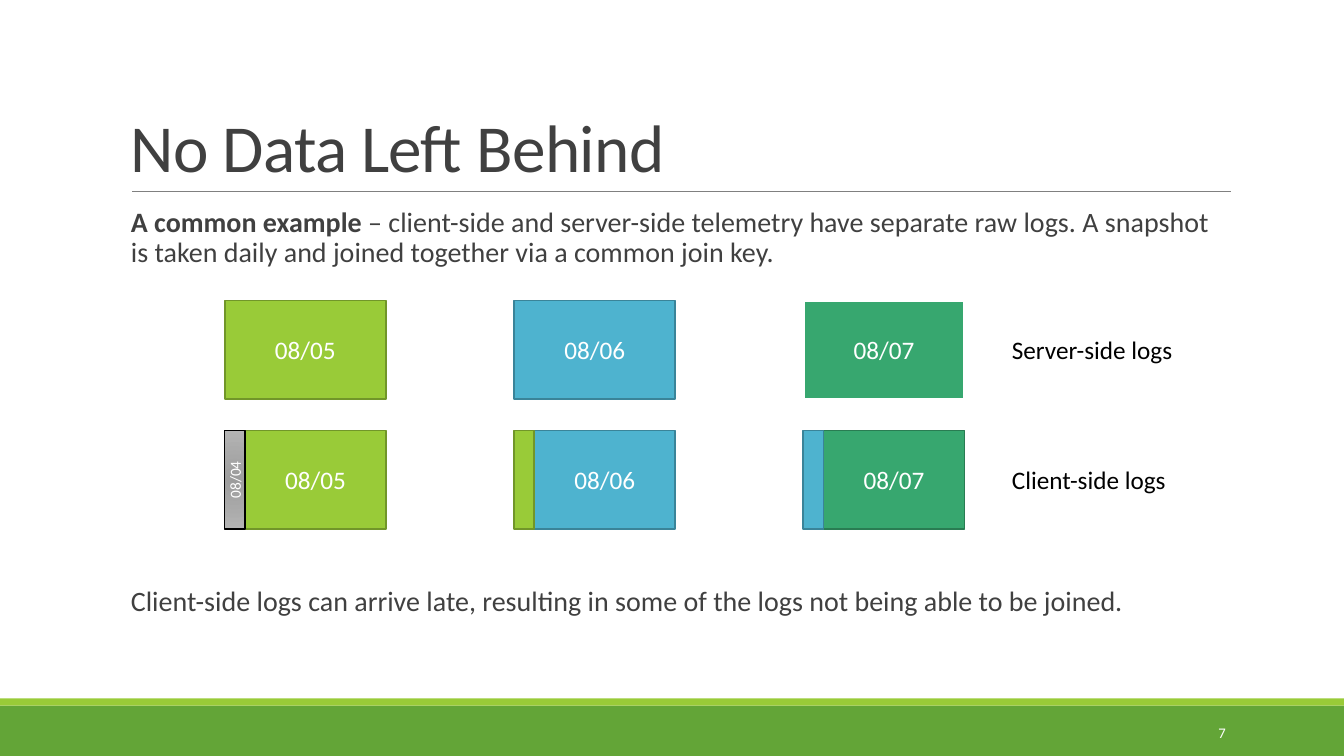
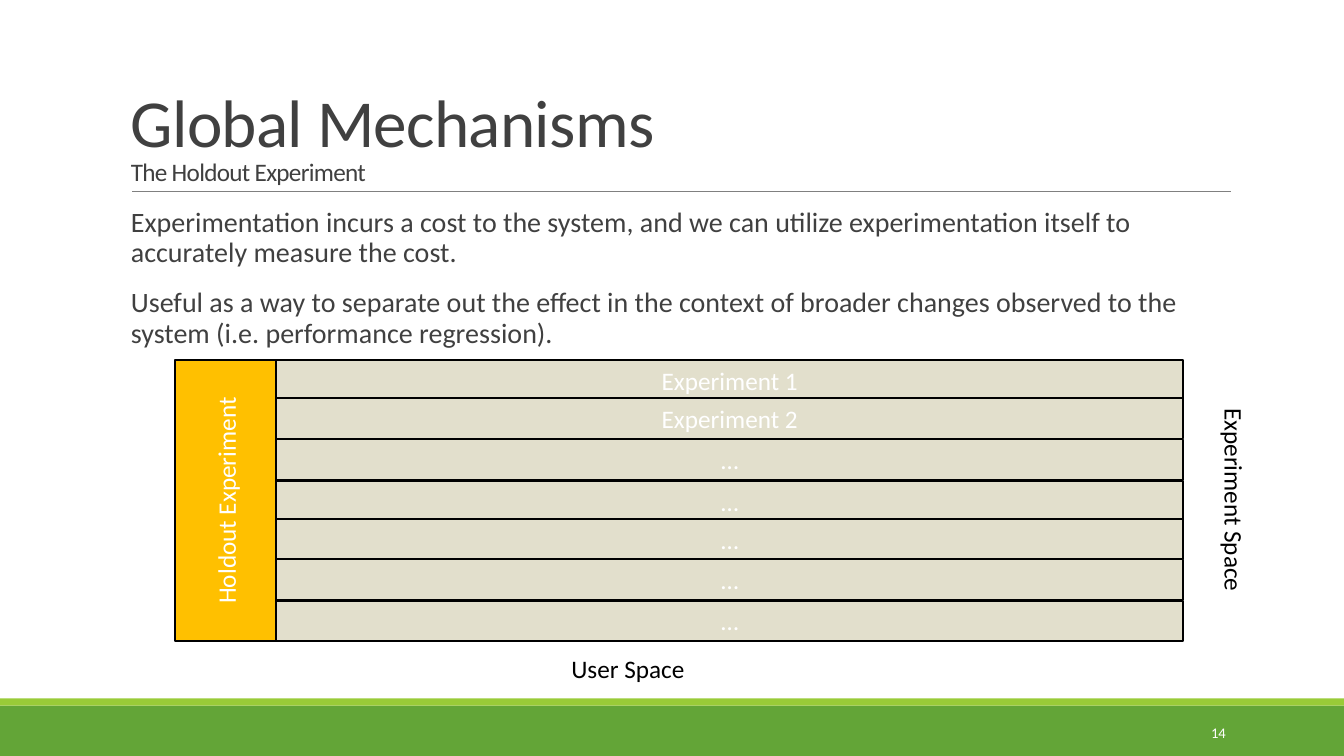
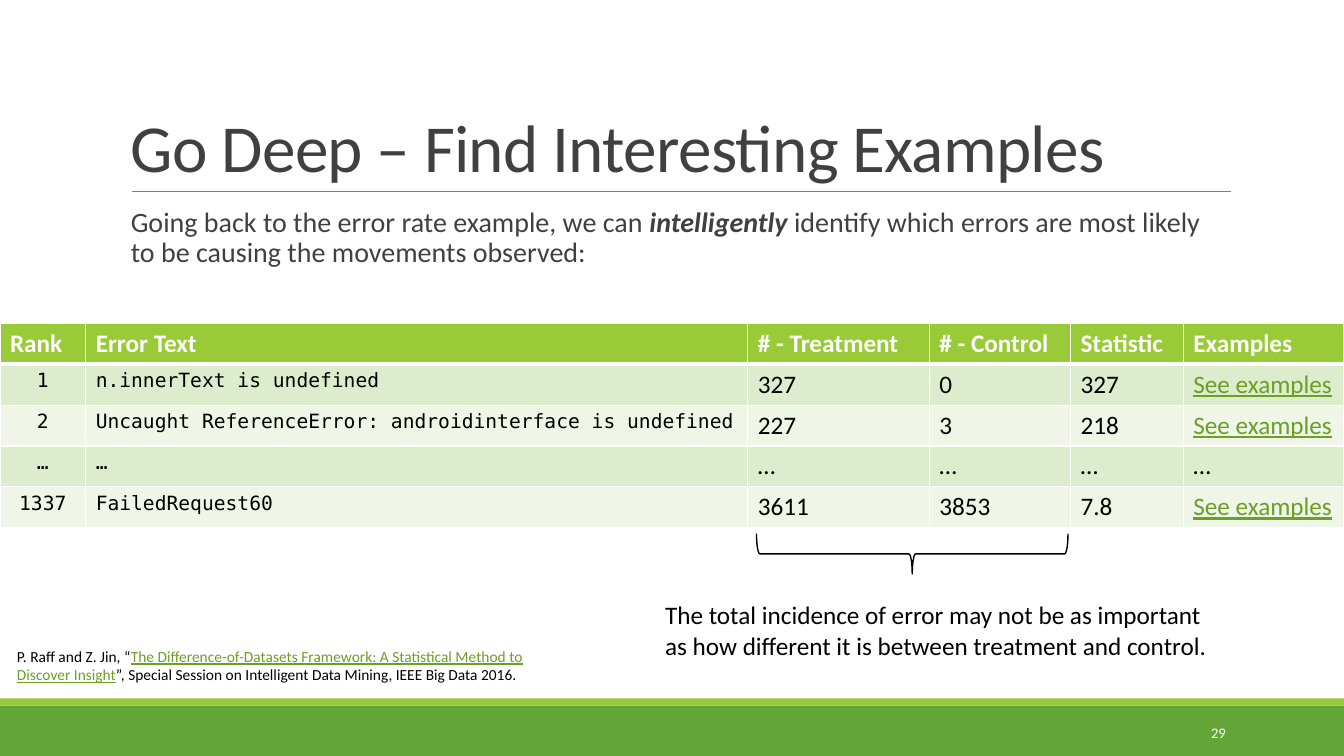
import pptx
import pptx.util
import pptx.dml.color
import pptx.enum.shapes
import pptx.enum.text
import pptx.oxml.ns
import lxml.etree

Inches, Pt = pptx.util.Inches, pptx.util.Pt
SHAPE = pptx.enum.shapes.MSO_SHAPE
ALIGN = pptx.enum.text.PP_ALIGN
ANCHOR = pptx.enum.text.MSO_ANCHOR
qn = pptx.oxml.ns.qn

# A 16:9 page
PAGE_H = 7.5
PAGE_W = PAGE_H * 16 / 9

COLORS = {
    "green": "63A537", "lime": "99CB38", "lime_edge": "719629",
    "blue": "4EB3CF", "blue_edge": "3A8499",
    "teal": "37A76F", "teal_edge": "297C52",
    "gold": "FFC000", "sand": "E2DFCC",
    "gray_dark": "9C9C9C", "gray_light": "B4B4B4", "rule": "808080",
    "text": "404040", "black": "000000", "white": "FFFFFF", "link": "6B9F25",
    "row_odd": "DEECCE", "row_even": "EFF6E8",
}
FONT, MONO = "Calibri", "DejaVu Sans Mono"
LINK = dict(color="link", underline=True)


def rgb(name):
    return pptx.dml.color.RGBColor.from_string(COLORS[name])


def add_run(p, text, size=18, color="black", font=FONT, bold=False,
            italic=False, underline=False, spacing=None):
    r = p.add_run()
    r.text = text
    f = r.font
    f.size, f.name, f.bold, f.italic = Pt(size), font, bold, italic
    f.color.rgb = rgb(color)
    if underline:
        f.underline = True
    if spacing is not None:
        r._r.get_or_add_rPr().set("spc", str(int(spacing * 100)))


def write(tf, paragraphs, align=ALIGN.LEFT, line=None, before=None, after=None, **fmt):
    """Fill a frame; a paragraph is a string or a list of (text, overrides)."""
    if isinstance(paragraphs, str):
        paragraphs = [paragraphs]
    for i, runs in enumerate(paragraphs):
        p = tf.paragraphs[0] if i == 0 else tf.add_paragraph()
        p.alignment = align
        if line:
            p.line_spacing = line
        if before is not None:
            p.space_before, p.space_after = Pt(before), Pt(after)
        for text, extra in [(runs, {})] if isinstance(runs, str) else runs:
            if text.startswith("\n"):
                p.add_line_break()
            add_run(p, text.lstrip("\n"), **{**fmt, **extra})


class Deck:
    def __init__(self):
        self.prs = pptx.Presentation()
        self.prs.slide_width, self.prs.slide_height = Inches(PAGE_W), Inches(PAGE_H)
        self.s = None

    def slide(self, title, number):
        """Start a slide with the shared bands, rule, title and number."""
        self.s = self.prs.slides.add_slide(self.prs.slide_layouts[6])
        self.box(0, 7, PAGE_W, 0.5, "green")
        self.box(0, 6.93, PAGE_W, 0.07, "lime")
        self.line(1.31, 1.9, 12.21, 1.9, "rule", 0.5)
        self.text(1.2, 0.31, 11, 1.59, [title], anchor=ANCHOR.BOTTOM,
                  line=0.85, size=48, color="text", spacing=-0.5)
        self.text(10.83, 7.07, 1.43, 0.4, str(number), anchor=ANCHOR.MIDDLE,
                  align=ALIGN.RIGHT, size=10.5, color="white")

    def line(self, x1, y1, x2, y2, color, width):
        c = self.s.shapes.add_connector(pptx.enum.shapes.MSO_CONNECTOR.STRAIGHT,
                                        Inches(x1), Inches(y1), Inches(x2), Inches(y2))
        c.line.color.rgb, c.line.width = rgb(color), Pt(width)
        lxml.etree.SubElement(c._element.spPr, qn("a:effectLst"))

    def box(self, x, y, w, h, fill=None, edge=None, width=1.25, text=None,
            vert=None, size=18, kind=SHAPE.RECTANGLE):
        sp = self.s.shapes.add_shape(kind, Inches(x), Inches(y), Inches(w), Inches(h))
        sp.shadow.inherit = False
        if fill:
            sp.fill.solid()
            sp.fill.fore_color.rgb = rgb(fill)
        else:
            sp.fill.background()
        if edge:
            sp.line.color.rgb, sp.line.width = rgb(edge), Pt(width)
        else:
            sp.line.fill.background()
        if text:
            tf = sp.text_frame
            tf.word_wrap, tf.vertical_anchor = True, ANCHOR.MIDDLE
            if vert:
                tf._txBody.bodyPr.set("vert", vert)
            write(tf, text, align=ALIGN.CENTER, size=size, color="white")
        return sp

    def radial(self, sp, inner, outer):
        """Give a shape a circular gradient centred on its lower right corner."""
        sp.fill.gradient()
        for stop, color in zip(sp.fill.gradient_stops, (inner, outer)):
            stop.color.rgb = rgb(color)
        grad = sp._element.spPr.find(qn("a:gradFill"))
        for old in grad.findall(qn("a:lin")):
            grad.remove(old)
        circle = lxml.etree.SubElement(grad, qn("a:path"), path="circle")
        lxml.etree.SubElement(circle, qn("a:fillToRect"),
                              l="100000", t="100000", r="100000", b="100000")

    def text(self, x, y, w, h, paragraphs, anchor=ANCHOR.TOP, wrap=True, vert=None, **fmt):
        tf = self.s.shapes.add_textbox(Inches(x), Inches(y), Inches(w), Inches(h)).text_frame
        tf.word_wrap, tf.vertical_anchor = wrap, anchor
        if vert:
            tf._txBody.bodyPr.set("vert", vert)
        write(tf, paragraphs, **fmt)

    def body(self, paragraphs, y=2.02, h=1.5):
        self.text(1.2, y, 11, h, paragraphs, line=0.9, before=12, after=2,
                  size=20, color="text")

    def cell(self, cell, text, fill, top=1, bottom=1, **fmt):
        tcPr = cell._tc.get_or_add_tcPr()
        for side, width in (("L", 1), ("R", 1), ("T", top), ("B", bottom)):
            ln = lxml.etree.SubElement(tcPr, qn("a:ln" + side), w=str(Pt(width)))
            solid = lxml.etree.SubElement(ln, qn("a:solidFill"))
            lxml.etree.SubElement(solid, qn("a:srgbClr"), val=COLORS["white"])
        cell.fill.solid()
        cell.fill.fore_color.rgb = rgb(fill)
        write(cell.text_frame, text, **fmt)

    def table(self, x, y, widths, row_h, rows):
        """Table with a green header, banded rows and two monospaced columns."""
        t = self.s.shapes.add_table(len(rows), len(widths), Inches(x), Inches(y),
                                    Inches(sum(widths)), Inches(row_h * len(rows))).table
        for col, w in zip(t.columns, widths):
            col.width = Inches(w)
        for i, row in enumerate(rows):
            t.rows[i].height = Inches(row_h)
            for j, text in enumerate(row):
                if i == 0:
                    self.cell(t.cell(i, j), text, "lime", bottom=3, color="white", bold=True)
                    continue
                fmt = dict(font=MONO, size=14) if j < 2 else {}
                if j == 0:
                    fmt["align"] = ALIGN.CENTER
                if text == "See examples":
                    fmt.update(LINK)
                self.cell(t.cell(i, j), text, "row_odd" if i % 2 else "row_even",
                          top=3 if i == 1 else 1, **fmt)


def late_logs(d):
    d.slide("No Data Left Behind", 7)
    d.body([[("A common example", dict(bold=True)),
             (" – client-side and server-side telemetry have separate raw logs. "
              "A snapshot is taken daily and joined together via a common join key.", {})]])
    d.body("Client-side logs can arrive late, resulting in some of the logs "
           "not being able to be joined.", y=5.78, h=0.5)

    # One column per day: server log above, client log with its late part below
    left, pitch, w, h, late_w = 2.23, 2.87, 1.6, 0.98, 0.2
    server_y, client_y = 2.98, 4.27
    days = [("08/05", "lime"), ("08/06", "blue"), ("08/07", "teal")]
    for i, (day, color) in enumerate(days):
        x, edge = left + i * pitch, color + "_edge"
        if color == "teal":
            d.box(x, server_y, w, h, color, "white", 2, day)
        else:
            d.box(x, server_y, w, h, color, edge, text=day)
        d.box(x + late_w, client_y, w - late_w, h, color, edge, text=day)
        if i == 0:
            late = d.box(x, client_y, late_w, h, "gray_dark", "black", 1,
                         "08/04", vert="vert270", size=11)
            d.radial(late, "gray_dark", "gray_light")
        else:
            previous = days[i - 1][1]
            d.box(x, client_y, late_w, h, previous, previous + "_edge")

    for label, y, label_w in (("Server-side logs", server_y, 1.82),
                              ("Client-side logs", client_y, 1.75)):
        d.text(9.94, y + 0.29, label_w, 0.4, label, wrap=False)


def holdout(d):
    d.slide([("Global Mechanisms", {}), ("\nThe Holdout Experiment", dict(size=18))], 14)
    d.body(["Experimentation incurs a cost to the system, and we can utilize "
            "experimentation itself to accurately measure the cost.",
            "Useful as a way to separate out the effect in the context of broader "
            "changes observed to the system (i.e. performance regression)."])

    # Holdout column beside the stacked experiments
    x, w = 1.74, 1
    tops = [3.57, 3.95, 4.36, 4.77, 5.15, 5.55, 5.96]
    names = ["Experiment 1", "Experiment 2"] + ["…"] * 5
    d.box(x, tops[0], w, 2.79, "gold", "black", text="Holdout Experiment", vert="vert270")
    for top, name in zip(tops, names):
        d.box(x + w, top, 9, 0.4, "sand", "black", text=name)

    # Axis labels
    d.text(5.57, 6.43, 1.34, 0.4, "User Space", wrap=False)
    d.text(11.95, 3.95, 0.5, 1.94, "Experiment Space", wrap=False, vert="vert")


def examples(d):
    d.slide("Go Deep – Find Interesting Examples", 29)
    d.body([[("Going back to the error rate example, we can ", {}),
             ("intelligently", dict(bold=True, italic=True)),
             (" identify which errors are most likely to be causing the "
              "movements observed:", {})]])
    d.table(0, 3.21, [0.85, 6.57, 1.8, 1.4, 1.12, 1.59], 0.405, [
        ["Rank", "Error Text", "# - Treatment", "# - Control", "Statistic", "Examples"],
        ["1", "n.innerText is undefined", "327", "0", "327", "See examples"],
        ["2", "Uncaught ReferenceError: androidinterface is undefined",
         "227", "3", "218", "See examples"],
        ["…"] * 6,
        ["1337", "FailedRequest60", "3611", "3853", "7.8", "See examples"],
    ])

    # Brace under the two count columns, with its remark
    brace = d.box(8.85, 3.95, 0.4, 3.09, edge="black", width=1, kind=SHAPE.LEFT_BRACE)
    brace.rotation = 270
    d.text(6.5, 5.9, 5.76, 0.71, "The total incidence of error may not be as important "
           "as how different it is between treatment and control.")

    # Citation
    d.text(0.07, 6.37, 5.65, 0.47, [[
        ("P. Raff and Z. Jin, “", {}),
        ("The Difference-of-Datasets Framework: A Statistical Method to "
         "Discover Insight", LINK),
        ("”, Special Session on Intelligent Data Mining, IEEE Big Data 2016.", {}),
    ]], size=11)


def main():
    d = Deck()
    late_logs(d)
    holdout(d)
    examples(d)
    d.prs.save("out.pptx")


if __name__ == "__main__":
    main()
